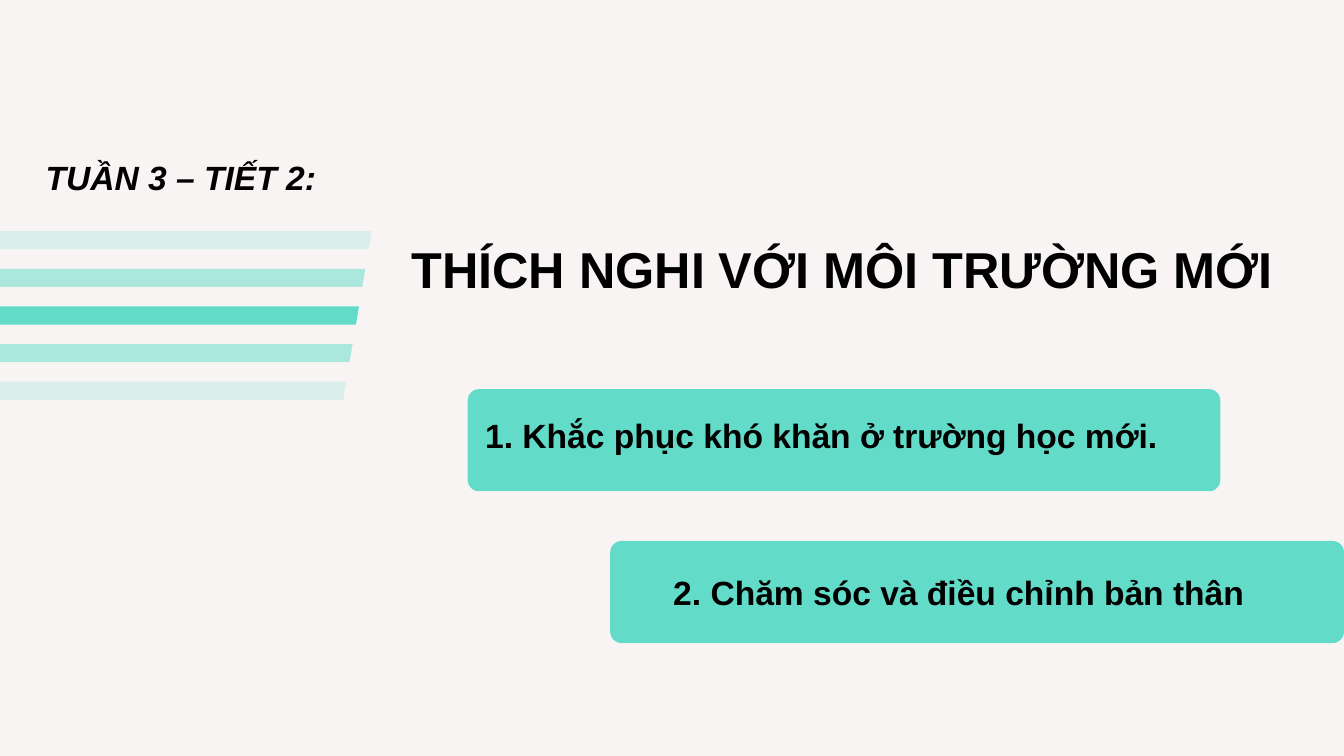
import pptx
import pptx.dml.color
import pptx.enum.shapes
import pptx.enum.text
import pptx.oxml
import pptx.oxml.ns
import pptx.util
from dataclasses import dataclass

Inches = pptx.util.Inches
Pt = pptx.util.Pt


@dataclass(frozen=True)
class Theme:
    font: str = "Arial"
    background: str = "F8F4F4"
    accent: str = "62DBC8"
    ink: str = "000000"
    title_size: int = 54
    body_size: int = 36


class LessonSlide:
    def __init__(self, slide, theme):
        self.slide = slide
        self.theme = theme
        self.paint(slide.background.fill, theme.background)

    def paint(self, fill, colour):
        fill.solid()
        fill.fore_color.rgb = pptx.dml.color.RGBColor.from_string(colour)

    def block(self, left, top, width, height, colour, opacity=100, radius=0, rotation=0):
        kinds = pptx.enum.shapes.MSO_SHAPE
        kind = kinds.ROUNDED_RECTANGLE if radius else kinds.RECTANGLE
        block = self.slide.shapes.add_shape(
            kind, Inches(left), Inches(top), Inches(width), Inches(height))
        if radius:
            block.adjustments[0] = radius / min(width, height)
        block.rotation = rotation
        block.shadow.inherit = False
        block.line.fill.background()
        self.paint(block.fill, colour)
        if opacity < 100:
            alpha = pptx.oxml.parse_xml(
                f'<a:alpha {pptx.oxml.ns.nsdecls("a")} val="{opacity * 1000}"/>')
            block.element.spPr.find(".//" + pptx.oxml.ns.qn("a:srgbClr")).append(alpha)

    def set_text(self, frame, words, size, italic=False):
        frame.text = words
        frame.word_wrap = True
        frame.auto_size = pptx.enum.text.MSO_AUTO_SIZE.SHAPE_TO_FIT_TEXT
        frame.vertical_anchor = pptx.enum.text.MSO_ANCHOR.TOP
        line = frame.paragraphs[0]
        line.alignment = pptx.enum.text.PP_ALIGN.LEFT
        line.font.name = self.theme.font
        line.font.size = Pt(size)
        line.font.bold = True
        line.font.italic = italic
        line.font.color.rgb = pptx.dml.color.RGBColor.from_string(self.theme.ink)

    def label(self, left, top, width, height, words, italic=False):
        box = self.slide.shapes.add_textbox(
            Inches(left), Inches(top), Inches(width), Inches(height))
        self.set_text(box.text_frame, words, self.theme.body_size, italic)
        return box.text_frame

    def title(self, left, top, width, height, words):
        heading = self.slide.shapes.title
        heading.left, heading.top = Inches(left), Inches(top)
        heading.width, heading.height = Inches(width), Inches(height)
        self.set_text(heading.text_frame, words, self.theme.title_size)
        heading.text_frame.word_wrap = False
        # Bring the heading in front of the stripe mask
        heading.element.getparent().append(heading.element)


def main():
    deck = pptx.Presentation()
    deck.slide_width, deck.slide_height = Inches(20), Inches(11.25)
    theme = Theme()
    lesson = LessonSlide(deck.slides.add_slide(deck.slide_layouts[5]), theme)

    # Stripes fading outwards, their right ends cut by a slanted mask
    for row, opacity in enumerate((20, 50, 100, 50, 20)):
        lesson.block(-7.4, 3.44 + row * 0.56, 13.74, 0.27, theme.accent, opacity)
    lesson.block(5.33, 3.04, 1.62, 3.33, theme.background, rotation=9.6)

    # Cards behind the two topics
    for left, top, width in ((6.96, 5.79, 11.2), (9.08, 8.05, 10.92)):
        lesson.block(left, top, width, 1.52, theme.accent, radius=0.17)

    # Topics
    first_topic = lesson.label(7.22, 6.37, 10.58, 0.42,
                               "1. Khắc phục khó khăn ở trường học mới.")
    first_topic.margin_left = first_topic.margin_right = 0
    first_topic.margin_top = first_topic.margin_bottom = 0
    first_topic.paragraphs[0].line_spacing = Pt(29.4)
    lesson.label(9.92, 8.46, 9.21, 0.71, "2. Chăm sóc và điều chỉnh bản thân")

    # Week and lesson title
    lesson.label(0.58, 2.29, 4.25, 0.71, "TUẦN 3 – TIẾT 2:", italic=True)
    lesson.title(6.02, 3.49, 13.16, 1.01, "THÍCH NGHI VỚI MÔI TRƯỜNG MỚI")

    deck.save("out.pptx")


if __name__ == "__main__":
    main()
